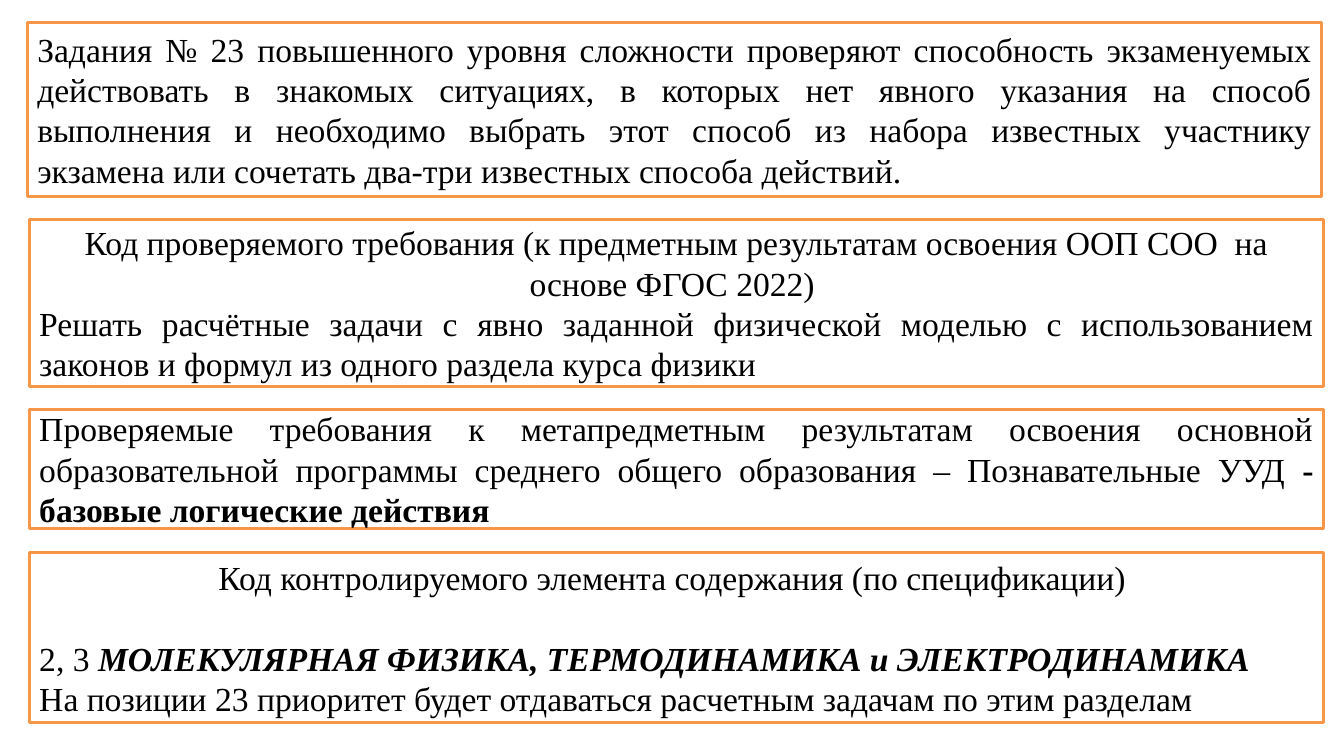
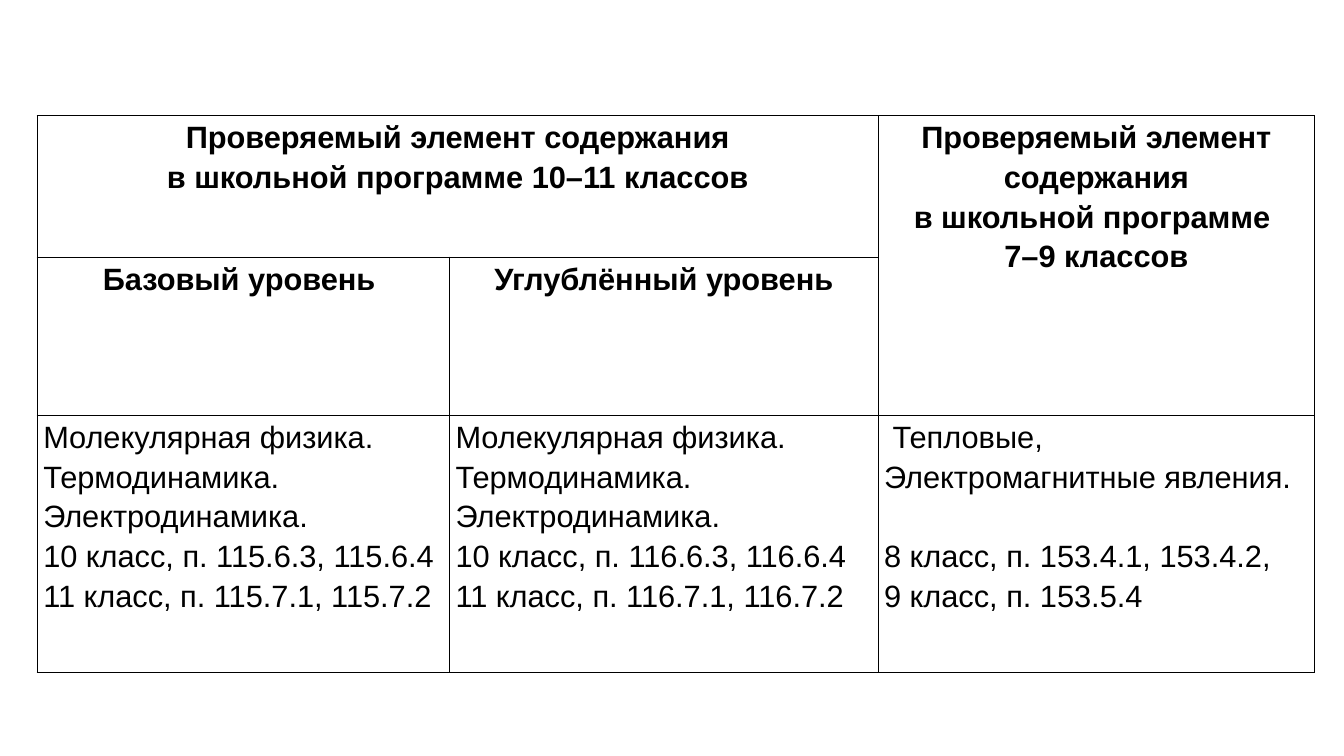
"""Build two slides on the requirements that exam task 23 checks."""
from dataclasses import dataclass

from lxml.etree import SubElement
from pptx import Presentation
from pptx.dml.color import RGBColor
from pptx.enum.shapes import MSO_SHAPE
from pptx.enum.text import MSO_ANCHOR, PP_ALIGN
from pptx.oxml.ns import qn
from pptx.util import Cm, Pt

COLORS = {"ink": "000000", "paper": "FFFFFF", "frame": "F79646"}
LEFT, MID, FULL = PP_ALIGN.LEFT, PP_ALIGN.CENTER, PP_ALIGN.JUSTIFY
WIDTH = 32.61
COLS = (10.39, 10.8, 11)
ROWS = (3.56, 3.99, 6.48)


@dataclass
class Line:
    text: str
    align: PP_ALIGN = FULL
    gap: float = 0
    tail: str = ""
    slant: bool = False


BOXES = (
    (0.69, 0.56, 4.39, (
        Line("Задания № 23 повышенного уровня сложности проверяют способность "
             "экзаменуемых действовать в знакомых ситуациях, в которых нет явного "
             "указания на способ выполнения и необходимо выбрать этот способ из "
             "набора известных участнику экзамена или сочетать два-три известных "
             "способа действий."),
    )),
    (0.74, 5.54, 4.19, (
        Line("Код проверяемого требования (к предметным результатам освоения "
             "ООП СОО  на основе ФГОС 2022) ", MID),
        Line("Решать расчётные задачи с явно заданной физической моделью с "
             "использованием законов и формул из одного раздела курса физики"),
    )),
    (0.74, 10.31, 3, (
        Line("Проверяемые требования к метапредметным результатам освоения основной "
             "образовательной программы среднего общего образования – "
             "Познавательные УУД ", tail="- базовые логические действия "),
    )),
    (0.74, 13.92, 4.29, (
        Line("Код контролируемого элемента содержания (по спецификации) ", MID),
        Line("2, 3 ", gap=28.8, slant=True,
             tail="МОЛЕКУЛЯРНАЯ ФИЗИКА, ТЕРМОДИНАМИКА и ЭЛЕКТРОДИНАМИКА"),
        Line("На позиции 23 приоритет будет отдаваться расчетным задачам "
             "по этим разделам"),
    )),
)


def paint(fill, name):
    fill.solid()
    fill.fore_color.rgb = RGBColor.from_string(COLORS[name])


def write(frame, lines, face, size, bold=False, pitch=1.0):
    frame.word_wrap = True
    frame.text = "\n".join(line.text for line in lines)
    for par, line in zip(frame.paragraphs, lines):
        par.alignment = line.align
        par.line_spacing = pitch
        par.space_before = Pt(line.gap)
        if line.tail:
            par.add_run().text = line.tail
        for pos, run in enumerate(par.runs):
            run.font.name, run.font.size = face, Pt(size)
            run.font.bold = bold or pos > 0
            run.font.italic = line.slant and pos > 0
            paint(run.font.fill, "ink")


def add_box(slide, left, top, height, lines):
    box = slide.shapes.add_shape(MSO_SHAPE.FLOWCHART_PROCESS,
                                 Cm(left), Cm(top), Cm(WIDTH), Cm(height))
    box.shadow.inherit = False
    paint(box.fill, "paper")
    paint(box.line.fill, "frame")
    box.line.width = Pt(2)
    box.text_frame.vertical_anchor = MSO_ANCHOR.MIDDLE
    write(box.text_frame, lines, "Times New Roman", 24)


def rule(cell):
    props = cell._tc.get_or_add_tcPr()
    for side in ("lnL", "lnR", "lnT", "lnB"):
        edge = SubElement(props, qn(f"a:{side}"), w=str(Pt(1)))
        fill = SubElement(edge, qn("a:solidFill"))
        SubElement(fill, qn("a:srgbClr"), val=COLORS["ink"])


def fill_cell(cell, lines, bold):
    cell.margin_left = cell.margin_right = Cm(0.15)
    cell.margin_top = cell.margin_bottom = 0
    write(cell.text_frame, lines, "Arial", 22, bold, 1.15)


def head(*texts):
    return [Line(text, MID) for text in texts]


def level(code):
    return [Line(text, LEFT) for text in (
        "Молекулярная физика. Термодинамика.",
        "Электродинамика.",
        f"10 класс, п. {code}.6.3, {code}.6.4",
        f"11 класс, п. {code}.7.1, {code}.7.2")]


def add_grid(slide):
    grid = slide.shapes.add_table(len(ROWS), len(COLS), Cm(0.94), Cm(2.92),
                                  Cm(sum(COLS)), Cm(sum(ROWS))).table
    grid.first_row = grid.horz_banding = False
    for col, width in zip(grid.columns, COLS):
        col.width = Cm(width)
    for row, height in zip(grid.rows, ROWS):
        row.height = Cm(height)
    for cell in grid.iter_cells():
        rule(cell)
        paint(cell.fill, "paper")
    grid.cell(0, 0).merge(grid.cell(0, 1))
    grid.cell(0, 2).merge(grid.cell(1, 2))
    cells = {
        (0, 0): head("Проверяемый элемент содержания",
                     "в школьной программе 10–11 классов"),
        (0, 2): head("Проверяемый элемент содержания",
                     "в школьной программе ", "7–9 классов"),
        (1, 0): head("Базовый уровень "),
        (1, 1): head("Углублённый уровень"),
        (2, 0): level(115),
        (2, 1): level(116),
        (2, 2): [Line(" Тепловые,", LEFT),
                 Line("Электромагнитные явления.", LEFT),
                 Line("8 класс, п. 153.4.1, 153.4.2,", LEFT, 28.3),
                 Line("9 класс, п. 153.5.4", LEFT)],
    }
    for (row, col), lines in cells.items():
        fill_cell(grid.cell(row, col), lines, row < 2)


def main():
    deck = Presentation()
    deck.slide_width, deck.slide_height = Cm(33.87), Cm(19.05)
    blank = deck.slide_layouts[6]
    tasks = deck.slides.add_slide(blank)
    for box in BOXES:
        add_box(tasks, *box)
    add_grid(deck.slides.add_slide(blank))
    deck.save("out.pptx")


if __name__ == "__main__":
    main()
